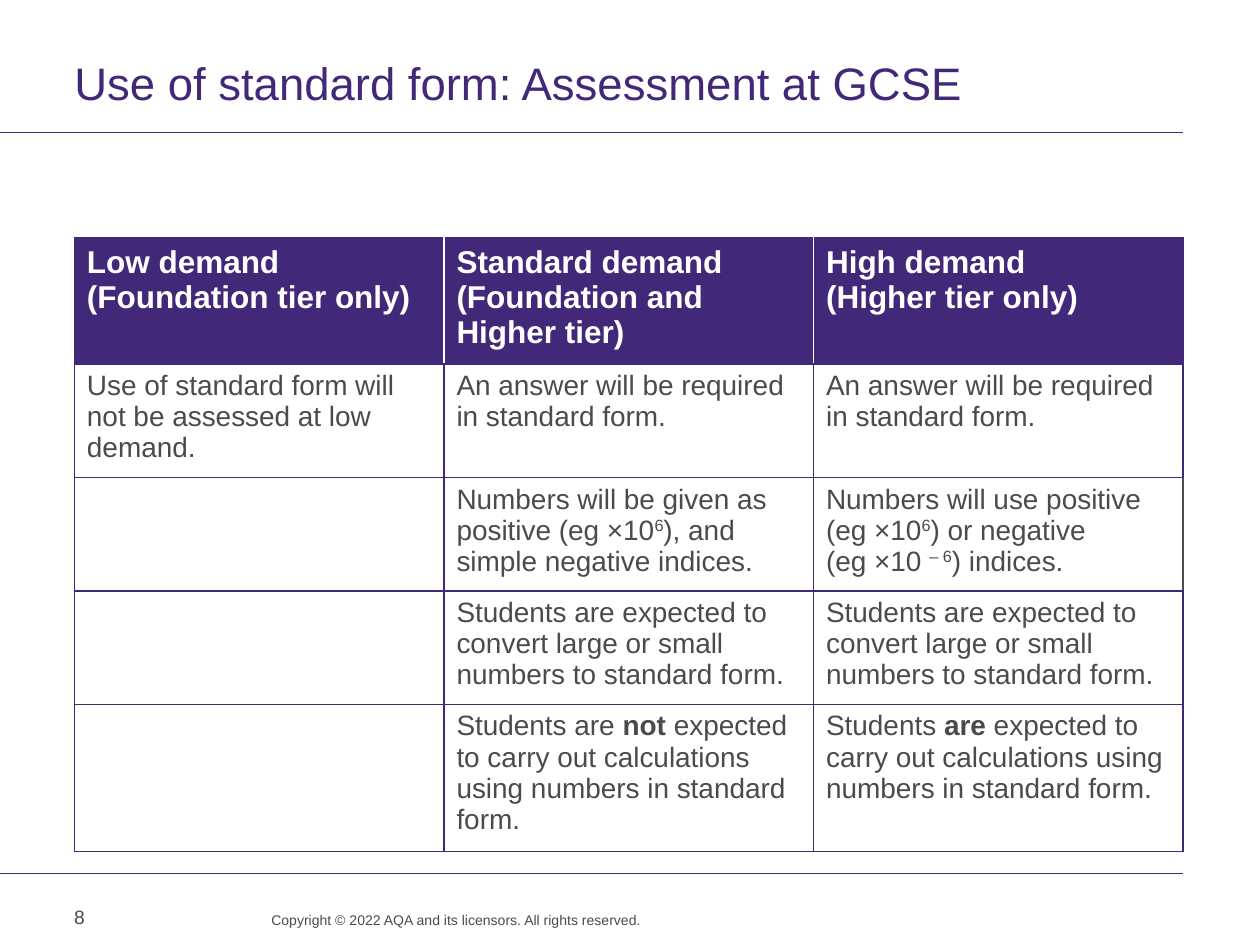
from lxml import etree
from pptx import Presentation
from pptx.dml.color import RGBColor
from pptx.enum.shapes import MSO_CONNECTOR
from pptx.enum.text import MSO_ANCHOR, PP_ALIGN
from pptx.oxml.ns import qn
from pptx.util import Inches, Pt

STRAIGHT = MSO_CONNECTOR.STRAIGHT
TOP, MIDDLE = MSO_ANCHOR.TOP, MSO_ANCHOR.MIDDLE
LEFT, RIGHT = PP_ALIGN.LEFT, PP_ALIGN.RIGHT
PURPLE, GREY, WHITE = "412878", "4B4B4B", "FFFFFF"
MARGIN, CONTENT_WIDTH = 0.59, 8.8
ROW_HEIGHTS = [0.95, 0.85, 0.85, 0.85, 1.13]


def color(value):
    return RGBColor.from_string(value)


def style(paragraph, size, value, align=LEFT, bold=False):
    paragraph.alignment = align
    font = paragraph.font
    font.name, font.size, font.bold = "Arial", Pt(size), bold
    font.color.rgb = color(value)


prs = Presentation()
prs.slide_width, prs.slide_height = Inches(10), Inches(7.5)
slide = prs.slides.add_slide(prs.slide_layouts[5])

# Rules below the title and above the footer
for y in (1.05, 6.93):
    rule = slide.shapes.add_connector(
        STRAIGHT, 0, Inches(y), Inches(MARGIN + CONTENT_WIDTH), Inches(y))
    rule.line.color.rgb = color(PURPLE)
    rule.line.width = Pt(0.6)
    etree.SubElement(rule._element.spPr, qn("a:effectLst"))

# Title
title = slide.shapes.title
title.left, title.top = Inches(MARGIN), Inches(0.48)
title.width, title.height = Inches(CONTENT_WIDTH), Inches(0.47)
heading = title.text_frame
heading.margin_left = heading.margin_top = heading.margin_bottom = 0
heading.vertical_anchor = TOP
heading.text = "Use of standard form: Assessment at GCSE"
heading.paragraphs[0].line_spacing = Pt(28)
style(heading.paragraphs[0], 26, PURPLE)

# Footer: copyright line and page number
footer = [
    ("Copyright © 2022 AQA and its licensors. All rights reserved.",
     (1.67, 7.23, 3.42, 0.26), 8, RIGHT, TOP, 0, Pt(10)),
    ("8", (0.49, 7.08, 0.76, 0.4), 11, LEFT, MIDDLE, 0.1, None),
]
for text, box, size, align, anchor, inset, spacing in footer:
    frame = slide.shapes.add_textbox(*map(Inches, box)).text_frame
    frame.word_wrap = True
    frame.vertical_anchor = anchor
    frame.margin_left = frame.margin_right = Inches(inset)
    frame.margin_top = frame.margin_bottom = Inches(inset / 2)
    frame.text = text
    frame.paragraphs[0].line_spacing = spacing
    style(frame.paragraphs[0], size, GREY, align)

# Table content: each cell is a list of pieces, marked ^ for superscript, * for bold
answer = ["An answer will be required in standard form."]
convert = ["Students are expected to convert large or small numbers to standard form."]
calculate = " expected to carry out calculations using numbers in standard form."
rows = [
    [["Low demand (Foundation tier only)"],
     ["Standard demand (Foundation and Higher tier)"],
     ["High demand", "\n", "(Higher tier only)"]],
    [["Use of standard form will not be assessed at low demand."], answer, answer],
    [[],
     ["Numbers will be given as positive (eg ×10", "^6", "), and simple negative indices."],
     ["Numbers will use positive (eg ×10", "^6", ") or negative", "\n",
      "(eg ×10 ", "^– 6", ") indices."]],
    [[], convert, convert],
    [[], ["Students are ", "*not", calculate], ["Students ", "*are", calculate]],
]

# Demand table
demand = slide.shapes.add_table(
    len(rows), 3, Inches(MARGIN), Inches(1.89),
    Inches(CONTENT_WIDTH), Inches(sum(ROW_HEIGHTS))).table
demand.horz_banding = False
for r, (row, height) in enumerate(zip(rows, ROW_HEIGHTS)):
    demand.rows[r].height = Inches(height)
    header = r == 0
    for c, pieces in enumerate(row):
        cell = demand.cell(r, c)
        cell.fill.solid()
        cell.fill.fore_color.rgb = color(PURPLE if header else WHITE)

        paragraph = cell.text_frame.paragraphs[0]
        style(paragraph, 18 if header else 16, WHITE if header else GREY, bold=header)
        for piece in pieces:
            if piece == "\n":
                paragraph.add_line_break()
                continue
            run = paragraph.add_run()
            run.text = piece.lstrip("^*")
            if piece[0] == "^":
                run.font._element.set("baseline", "30000")
            elif piece[0] == "*":
                run.font.bold = True

        # Borders: white between header cells, purple elsewhere
        edges = {"L": PURPLE, "R": PURPLE, "T": PURPLE, "B": PURPLE}
        if header and c > 0:
            edges["L"] = WHITE
        if header and c < 2:
            edges["R"] = WHITE
        if (r, c) == (2, 2):
            edges["R"] = GREY
        properties = cell._tc.get_or_add_tcPr()
        for position, (side, value) in enumerate(edges.items()):
            border = etree.Element(qn("a:ln" + side), w=str(Pt(1)))
            fill = etree.SubElement(border, qn("a:solidFill"))
            etree.SubElement(fill, qn("a:srgbClr"), val=value)
            properties.insert(position, border)

prs.save("out.pptx")
